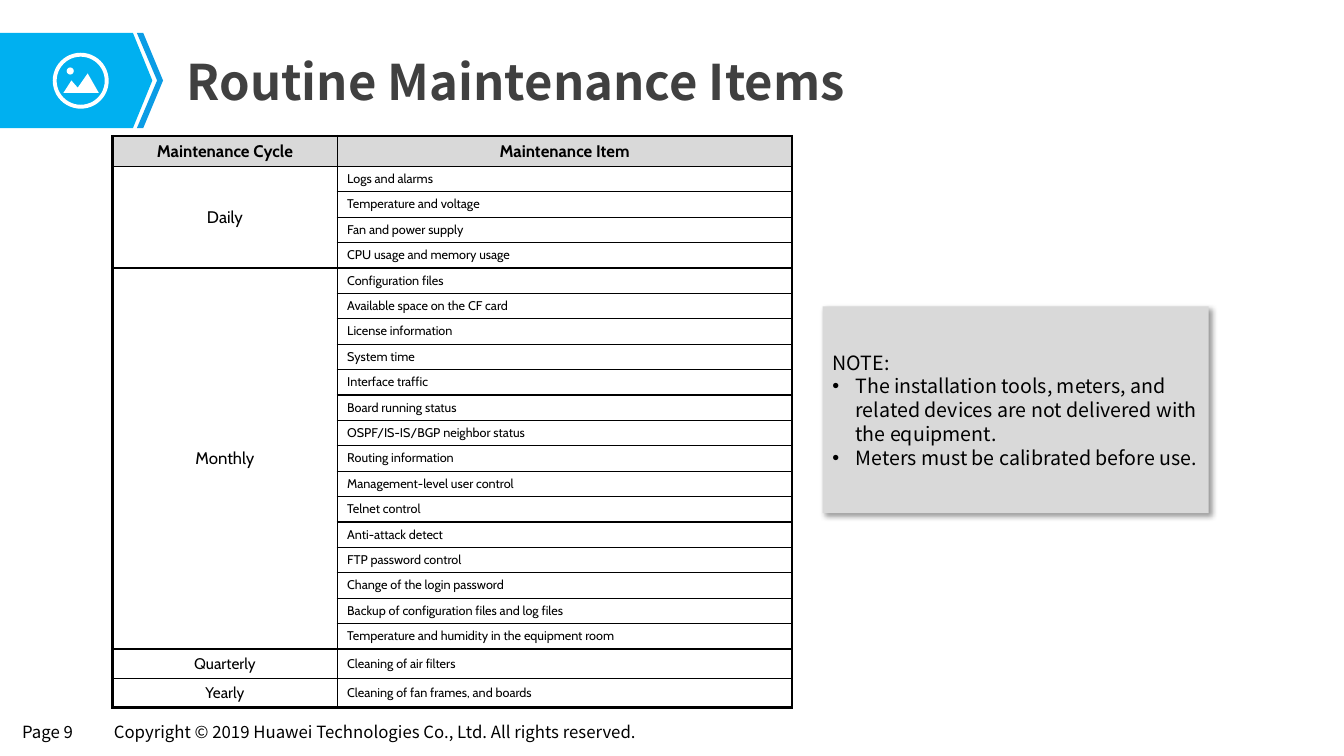
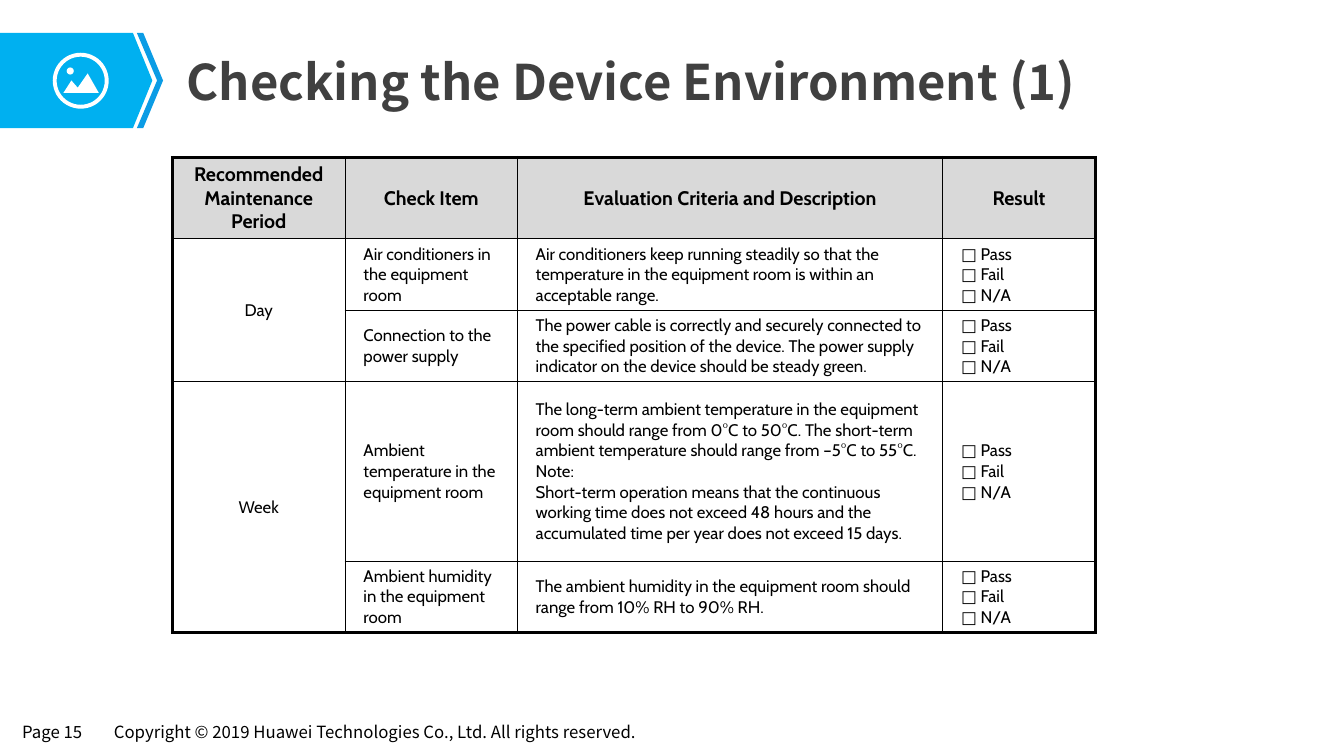
from dataclasses import dataclass

from lxml import etree
from pptx import Presentation
from pptx.dml.color import RGBColor
from pptx.enum.shapes import MSO_SHAPE
from pptx.enum.text import MSO_ANCHOR, MSO_AUTO_SIZE, PP_ALIGN
from pptx.oxml.ns import qn
from pptx.util import Cm, Pt

RECT, OVAL, DONUT = MSO_SHAPE.RECTANGLE, MSO_SHAPE.OVAL, MSO_SHAPE.DONUT
MIDDLE = MSO_ANCHOR.MIDDLE
LEFT, CENTER = PP_ALIGN.LEFT, PP_ALIGN.CENTER
NO_FIT = MSO_AUTO_SIZE.NONE
TITLE_ONLY = 5


@dataclass(frozen=True)
class Theme:
    black: RGBColor = RGBColor(0x00, 0x00, 0x00)
    white: RGBColor = RGBColor(0xFF, 0xFF, 0xFF)
    title: RGBColor = RGBColor(0x40, 0x40, 0x40)
    grey: RGBColor = RGBColor(0xD9, 0xD9, 0xD9)
    band: RGBColor = RGBColor(0x00, 0xB0, 0xF0)
    stripe: RGBColor = RGBColor(0x0B, 0x9C, 0xE5)
    font: str = "Noto Sans CJK SC"
    table_font: str = "Cabin"
    title_size: float = 35
    note_size: float = 14
    note_leading: float = 17
    footer_size: float = 12
    outer_line: float = 2.25
    inner_line: float = 1


THEME = Theme()

# Table content
CYCLES = [
    ("Daily", 12, [
        ["Logs and alarms"],
        ["Temperature and voltage"],
        ["Fan and power supply"],
        ["CPU usage and memory usage"],
    ]),
    ("Monthly", 12, [
        ["Configuration files"],
        ["Available space on the CF card"],
        ["License information"],
        ["System time"],
        ["Interface traffic"],
        ["Board running status"],
        ["OSPF/IS-IS/BGP neighbor status"],
        ["Routing information"],
        ["Management-level user control"],
        ["Telnet control"],
        ["Anti-attack detect"],
        ["FTP password control"],
        ["Change of the login password"],
        ["Backup of configuration files and log files"],
        ["Temperature and humidity in the equipment room"],
    ]),
    ("Quarterly", 11, [["Cleaning of air filters"]]),
    ("Yearly", 11, [["Cleaning of fan frames, and boards"]]),
]

RESULT = "□ Pass\n□ Fail\n□ N/A"
CHECKS = [
    ("Day", 12, [
        ["Air conditioners in the equipment room",
         "Air conditioners keep running steadily so that the temperature in "
         "the equipment room is within an acceptable range.", RESULT],
        ["Connection to the power supply",
         "The power cable is correctly and securely connected to the "
         "specified position of the device. The power supply indicator on "
         "the device should be steady green.", RESULT],
    ]),
    ("Week", 12, [
        ["Ambient temperature in the equipment room",
         "The long-term ambient temperature in the equipment room should "
         "range from 0°C to 50°C. The short-term ambient temperature should "
         "range from –5°C to 55°C.\nNote:\n"
         "Short-term operation means that the continuous working time does "
         "not exceed 48 hours and the accumulated time per year does not "
         "exceed 15 days.", RESULT],
        ["Ambient humidity in the equipment room",
         "The ambient humidity in the equipment room should range from "
         "10% RH to 90% RH.", RESULT],
    ]),
]


# Text
def write(tf, text, size, font=THEME.font, color=THEME.black, bold=False,
          align=LEFT):
    for i, line in enumerate(text.split("\n")):
        p = tf.add_paragraph() if i else tf.paragraphs[0]
        p.alignment = align
        r = p.add_run()
        r.text = line
        r.font.name = font
        r.font.size = Pt(size)
        r.font.bold = bold
        r.font.color.rgb = color


def add_footer(slide, left, width, text):
    sp = slide.shapes.add_textbox(Cm(left), Cm(18.06), Cm(width), Cm(0.74))
    tf = sp.text_frame
    tf.word_wrap = True
    tf.vertical_anchor = MIDDLE
    tf.margin_left = tf.margin_right = Cm(0.23)
    tf.margin_top = tf.margin_bottom = Cm(0.1)
    write(tf, text, THEME.footer_size)
    return sp


# Shapes
def paint(sp, color):
    sp.fill.solid()
    sp.fill.fore_color.rgb = color
    sp.line.fill.background()
    sp.shadow.inherit = False
    return sp


def add_preset(slide, kind, left, top, width, height, color):
    sp = slide.shapes.add_shape(kind, Cm(left), Cm(top), Cm(width), Cm(height))
    return paint(sp, color)


def add_polygon(slide, points, color):
    start, *rest = [(Cm(x), Cm(y)) for x, y in points]
    builder = slide.shapes.build_freeform(*start)
    builder.add_line_segments(rest, close=True)
    return paint(builder.convert_to_shape(), color)


# Title band, icon and copyright line, kept on the layout
def furnish_layout(slide):
    layout = slide.slide_layout
    for ph in list(layout.placeholders):
        if ph.placeholder_format.idx != 0:
            ph.element.getparent().remove(ph.element)

    top, mid, bottom = 0.83, 2.03, 3.23
    band = add_polygon(slide, [(0, top), (3.35, top), (3.84, mid),
                               (3.35, bottom), (0, bottom)], THEME.band)
    stripe = add_polygon(slide, [(3.61, top), (3.45, top), (3.96, mid),
                                 (3.45, bottom), (3.61, bottom), (4.11, mid)],
                         THEME.stripe)
    ring = add_preset(slide, DONUT, 1.33, 1.33, 1.41, 1.41, THEME.white)
    ring.adjustments[0] = 0.07
    hills = add_polygon(slide, [(1.6, 2.34), (1.8, 2.03), (1.96, 2.21),
                                (2.21, 1.85), (2.49, 2.34)], THEME.white)
    sun = add_preset(slide, OVAL, 1.68, 1.7, 0.18, 0.18, THEME.white)
    footer = add_footer(slide, 2.64, 14.38, "Copyright © 2019 Huawei "
                        "Technologies Co., Ltd. All rights reserved.")
    for sp in (band, stripe, ring, hills, sun, footer):
        layout.shapes.element.append(sp.element)


def add_page(prs, title, number):
    slide = prs.slides.add_slide(prs.slide_layouts[TITLE_ONLY])
    sp = slide.shapes.title
    sp.left, sp.top, sp.width, sp.height = Cm(4.42), Cm(1.14), Cm(27.3), Cm(1.78)
    tf = sp.text_frame
    tf.auto_size = NO_FIT
    tf.word_wrap = True
    tf.vertical_anchor = MIDDLE
    tf.margin_left = tf.margin_right = Cm(0.28)
    write(tf, title, THEME.title_size, color=THEME.title, bold=True)
    if number is not None:
        add_footer(slide, 0.33, 2.3, f"Page {number}")
    return slide


# Tables
def set_borders(cell, widths):
    tcPr = cell._tc.get_or_add_tcPr()
    for i, (side, width) in enumerate(zip("LRTB", widths)):
        ln = etree.Element(qn(f"a:ln{side}"), w=str(Pt(width)))
        fill = etree.SubElement(ln, qn("a:solidFill"))
        etree.SubElement(fill, qn("a:srgbClr"), val=str(THEME.black))
        tcPr.insert(i, ln)


def fill_cell(cell, text, size, bold=False, align=LEFT):
    cell.vertical_anchor = MIDDLE
    write(cell.text_frame, text, size, THEME.table_font, bold=bold, align=align)


def add_grouped_table(slide, left, top, widths, heights, header, header_size,
                      groups, body_size, indent=0.25):
    frame = slide.shapes.add_table(len(heights), len(widths), Cm(left), Cm(top),
                                   Cm(sum(widths)), Cm(sum(heights)))
    table = frame.table
    table.first_row = table.horz_banding = False
    for column, width in zip(table.columns, widths):
        column.width = Cm(width)
    for row, height in zip(table.rows, heights):
        row.height = Cm(height)

    for c, text in enumerate(header):
        fill_cell(table.cell(0, c), text, header_size, True, CENTER)
    r = 1
    for label, label_size, rows in groups:
        first = table.cell(r, 0)
        if len(rows) > 1:
            first.merge(table.cell(r + len(rows) - 1, 0))
        fill_cell(first, label, label_size, align=CENTER)
        for texts in rows:
            for c, text in enumerate(texts, 1):
                cell = table.cell(r, c)
                cell.margin_left = Cm(indent)
                fill_cell(cell, text, body_size)
            r += 1

    # Grey header, thin grid, thick frame
    last_row, last_col = len(heights) - 1, len(widths) - 1
    for r in range(last_row + 1):
        for c in range(last_col + 1):
            cell = table.cell(r, c)
            if r == 0:
                cell.fill.solid()
                cell.fill.fore_color.rgb = THEME.grey
            else:
                cell.fill.background()
            end_row = r + cell.span_height - 1 if cell.is_merge_origin else r
            on_frame = (c == 0, c == last_col, r == 0, end_row == last_row)
            set_borders(cell, [THEME.outer_line if edge else THEME.inner_line
                               for edge in on_frame])


# Note box
def add_shadow(sp):
    effects = sp.element.spPr.find(qn("a:effectLst"))
    shadow = etree.SubElement(effects, qn("a:outerShdw"), blurRad=str(Pt(4)),
                              dist=str(Pt(3)), dir="2700000", algn="tl",
                              rotWithShape="0")
    color = etree.SubElement(shadow, qn("a:srgbClr"), val=str(THEME.black))
    etree.SubElement(color, qn("a:alpha"), val="40000")


def add_note(slide, left, top, width, height, heading, points):
    sp = add_preset(slide, RECT, left, top, width, height, THEME.grey)
    add_shadow(sp)
    tf = sp.text_frame
    tf.word_wrap = True
    tf.vertical_anchor = MIDDLE
    write(tf, "\n".join([heading, *points]), THEME.note_size)
    for i, p in enumerate(tf.paragraphs):
        p.line_spacing = Pt(THEME.note_leading)
        if i:
            pPr = p._p.get_or_add_pPr()
            pPr.set("marL", str(Cm(0.58)))
            pPr.set("indent", str(-Cm(0.58)))
            etree.SubElement(pPr, qn("a:buFont"), typeface="Arial")
            etree.SubElement(pPr, qn("a:buChar"), char="•")


def main():
    prs = Presentation()
    prs.slide_width, prs.slide_height = Cm(33.87), Cm(19.05)

    # Routine maintenance items
    slide = add_page(prs, "Routine Maintenance Items", None)
    furnish_layout(slide)
    add_footer(slide, 0.33, 2.3, "Page 9")
    add_grouped_table(slide, 2.84, 3.43, [5.66, 11.46],
                      [0.76] + [0.64] * 19 + [0.74] * 2,
                      ["Maintenance Cycle", "Maintenance Item"], 12, CYCLES, 9)
    add_note(slide, 20.73, 7.72, 9.73, 5.21, "NOTE:", [
        "The installation tools, meters, and related devices are not "
        "delivered with the equipment.",
        "Meters must be calibrated before use.",
    ])

    # Device environment checks
    slide = add_page(prs, "Checking the Device Environment (1)", 15)
    add_grouped_table(slide, 4.34, 3.96, [4.36, 4.34, 10.72, 3.84],
                      [2.06, 1.8, 1.8, 4.52, 1.8],
                      ["Recommended Maintenance Period", "Check Item",
                       "Evaluation Criteria and Description", "Result"], 14,
                      CHECKS, 12, indent=0.46)

    prs.save("out.pptx")


if __name__ == "__main__":
    main()
